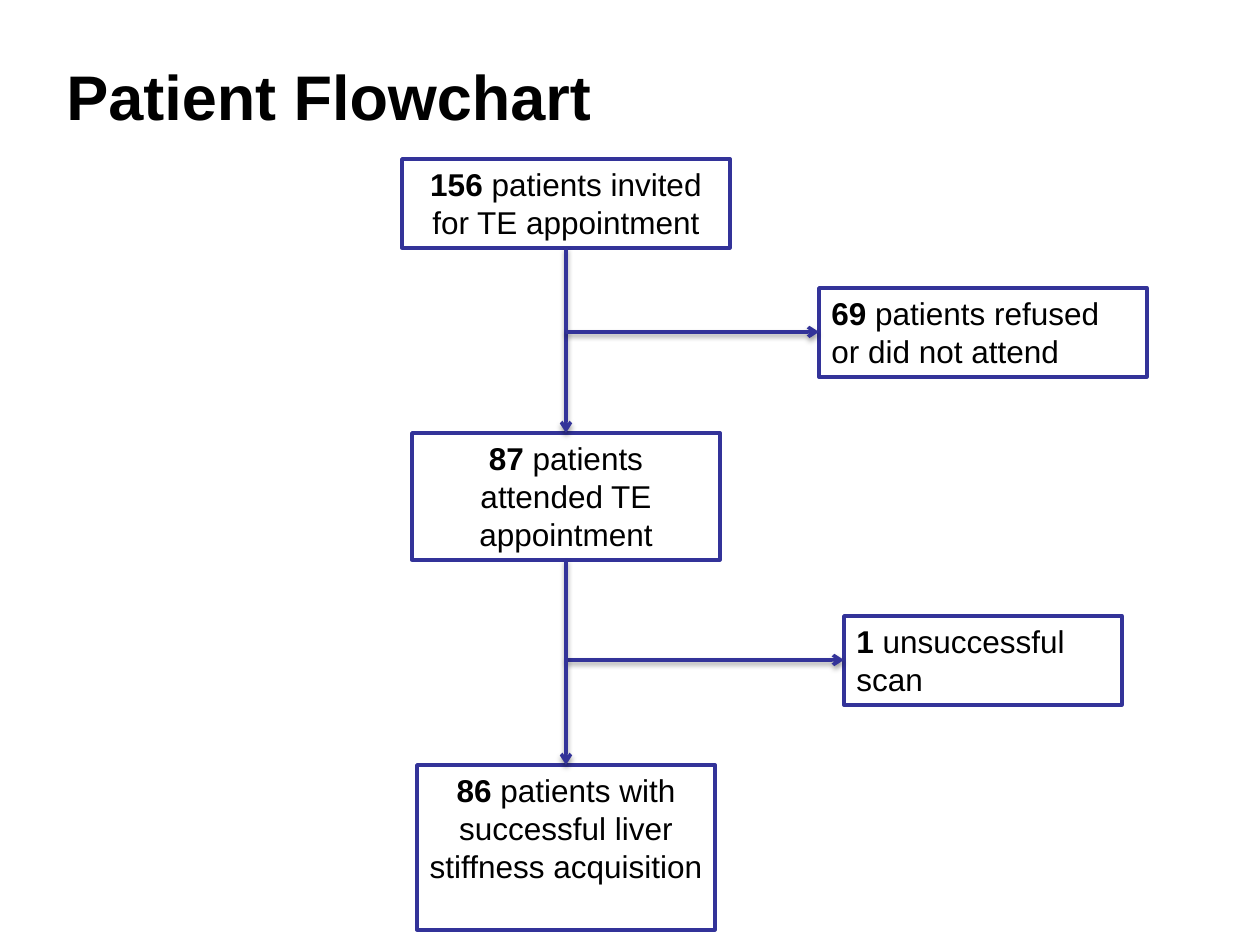
from lxml.etree import SubElement
from pptx import Presentation
from pptx.dml.color import RGBColor
from pptx.enum.shapes import MSO_CONNECTOR, MSO_SHAPE
from pptx.enum.text import MSO_ANCHOR, PP_ALIGN
from pptx.oxml.ns import qn
from pptx.util import Pt

COLORS = {"text": "000000", "fill": "FFFFFF", "outline": "333399", "shadow": "000000"}
FONT = "Arial"


def px(length):
    return round(length * 914400 / 126)


def add_run(paragraph, text, size, bold):
    run = paragraph.add_run()
    run.text = text
    run.font.name = FONT
    run.font.size = Pt(size)
    run.font.bold = bold
    run.font.color.rgb = RGBColor.from_string(COLORS["text"])


presentation = Presentation()
presentation.slide_width = px(1260)
presentation.slide_height = px(945)
slide = presentation.slides.add_slide(presentation.slide_layouts[6])

heading = slide.shapes.add_textbox(px(54), px(16), px(1134), px(158)).text_frame
heading.word_wrap = True
heading.vertical_anchor = MSO_ANCHOR.MIDDLE
add_run(heading.paragraphs[0], "Patient Flowchart", 36, True)

main_x = 566
excluded_x = 983
steps = [
    (main_x, 159, 328, 89, PP_ALIGN.CENTER, "156 ", "patients invited for TE appointment"),
    (main_x, 433, 308, 127, PP_ALIGN.CENTER, "87", " patients attended TE appointment"),
    (main_x, 765, 298, 165, PP_ALIGN.CENTER, "86", " patients with successful liver stiffness acquisition"),
    (excluded_x, 288, 328, 89, PP_ALIGN.LEFT, "69", " patients refused or did not attend"),
    (excluded_x, 616, 278, 89, PP_ALIGN.LEFT, "1", " unsuccessful scan"),
]
for center_x, top, width, height, alignment, count, outcome in steps:
    step = slide.shapes.add_shape(
        MSO_SHAPE.RECTANGLE, px(center_x - width / 2), px(top), px(width), px(height)
    )
    step.shadow.inherit = False
    step.fill.solid()
    step.fill.fore_color.rgb = RGBColor.from_string(COLORS["fill"])
    step.line.color.rgb = RGBColor.from_string(COLORS["outline"])
    step.line.width = Pt(2)
    label = step.text_frame
    label.word_wrap = True
    label.vertical_anchor = MSO_ANCHOR.TOP
    label.paragraphs[0].alignment = alignment
    add_run(label.paragraphs[0], count, 18, True)
    add_run(label.paragraphs[0], outcome, 18, False)

flows = [
    (main_x, 248, main_x, 433),
    (main_x, 332, 819, 332),
    (main_x, 660, 844, 660),
    (main_x, 560, main_x, 765),
]
for flow in flows:
    arrow = slide.shapes.add_connector(MSO_CONNECTOR.STRAIGHT, *map(px, flow))
    arrow.line.color.rgb = RGBColor.from_string(COLORS["outline"])
    arrow.line.width = Pt(2)
    properties = arrow.line._get_or_add_ln()
    SubElement(properties, qn("a:tailEnd"), type="arrow")
    effects = SubElement(arrow._element.spPr, qn("a:effectLst"))
    shadow = SubElement(
        effects, qn("a:outerShdw"), blurRad=str(Pt(3.1)), dist=str(Pt(1.6)),
        dir="5400000", rotWithShape="0",
    )
    shadow_color = SubElement(shadow, qn("a:srgbClr"), val=COLORS["shadow"])
    SubElement(shadow_color, qn("a:alpha"), val="38000")

presentation.save("out.pptx")
